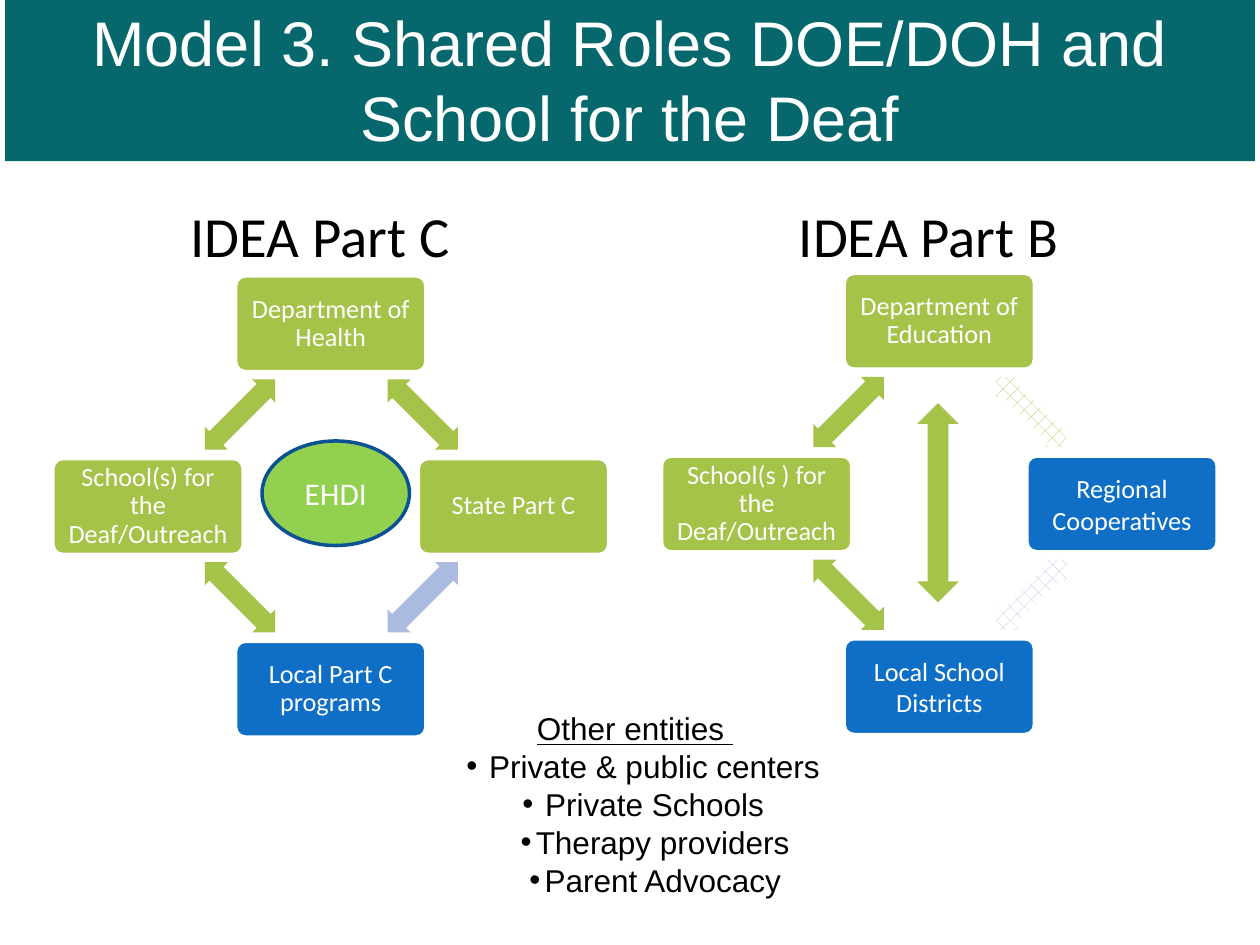
from lxml.etree import SubElement
from pptx import Presentation
from pptx.dml.color import RGBColor
from pptx.enum.dml import MSO_PATTERN as Pattern
from pptx.enum.shapes import MSO_SHAPE as Shape
from pptx.enum.text import MSO_ANCHOR as Anchor, MSO_AUTO_SIZE as AutoSize, PP_ALIGN as Align
from pptx.oxml.ns import qn
from pptx.util import Inches, Pt

COLORS = {
    "teal": "06686C",
    "green": "A5C249",
    "blue": "0F6FC6",
    "lavender": "ABBBDF",
    "lime": "92D050",
    "navy": "0B5292",
    "white": "FFFFFF",
    "black": "000000",
}

NODE_OFFSETS = [(1.45, 0), (2.9, 1.45), (1.45, 2.9), (0, 1.45)]
ARROW_OFFSETS = [(2.54, 0.97), (2.54, 2.42), (1.09, 2.42), (1.09, 0.97)]

PART_C_NODES = [
    ("Department of Health", "green", 0.9),
    ("State Part C", "green", 0.9),
    ("Local Part C programs", "blue", 0.9),
    ("School(s) for the Deaf/Outreach", "green", 0.9),
]
PART_C_ARROWS = [("green", False), ("lavender", False), ("green", False), ("green", False)]

PART_B_NODES = [
    ("Department of Education", "green", 0.9),
    ("Regional\nCooperatives", "blue", 1.0),
    ("Local School Districts", "blue", 1.0),
    ("School(s ) for the Deaf/Outreach", "green", 0.9),
]
PART_B_ARROWS = [("green", True), ("lavender", True), ("green", False), ("green", False)]

ENTITIES = [
    ("Private & public centers", 0.31, -0.18),
    ("Private Schools", 0.31, -0.18),
    ("Therapy providers", 0.44, -0.12),
    ("Parent Advocacy", 0.44, -0.12),
]


def color(name):
    return RGBColor.from_string(COLORS[name])


def write_text(paragraph, text, size=18, font="Calibri", fill="white", underline=None, spacing=1.0):
    paragraph.alignment = Align.CENTER
    paragraph.line_spacing = spacing
    paragraph.space_before = Pt(0)
    run = paragraph.add_run()
    run.text = text
    run.font.size = Pt(size)
    run.font.name = font
    run.font.underline = underline
    run.font.color.rgb = color(fill)


def set_bullet(paragraph, margin=0, indent=0, character=None):
    properties = paragraph._p.get_or_add_pPr()
    properties.set("marL", str(Inches(margin)))
    properties.set("indent", str(Inches(indent)))
    if character:
        SubElement(properties, qn("a:buChar")).set("char", character)
    else:
        SubElement(properties, qn("a:buNone"))


class RolesSlide:
    def __init__(self, presentation):
        self.slide = presentation.slides.add_slide(presentation.slide_layouts[1])

    def place(self, shape, left, top, width, height):
        shape.left, shape.top = Inches(left), Inches(top)
        shape.width, shape.height = Inches(width), Inches(height)

    def frame(self, shape, anchor=Anchor.MIDDLE, inset=None):
        frame = shape.text_frame
        frame.word_wrap = True
        frame.auto_size = AutoSize.NONE
        frame.vertical_anchor = anchor
        if inset is not None:
            frame.margin_left = frame.margin_right = Inches(inset)
            frame.margin_top = frame.margin_bottom = Inches(inset)
        return frame

    def banner(self, text, box):
        title = self.slide.shapes.title
        self.place(title, *box)
        title.fill.solid()
        title.fill.fore_color.rgb = color("teal")
        write_text(self.frame(title).paragraphs[0], text, size=36, font="Arial")

    def heading(self, text, box):
        text_box = self.slide.shapes.add_textbox(*map(Inches, box))
        write_text(self.frame(text_box).paragraphs[0], text, size=32.4, fill="black")

    def shape(self, kind, box, fill, line=None, patterned=False):
        shape = self.slide.shapes.add_shape(kind, *map(Inches, box))
        shape.shadow.inherit = False
        if patterned:
            shape.fill.patterned()
            shape.fill.pattern = Pattern.PERCENT_25
            shape.fill.back_color.rgb = color("white")
        else:
            shape.fill.solid()
        shape.fill.fore_color.rgb = color(fill)
        if line:
            shape.line.color.rgb = color(line)
            shape.line.width = Pt(2)
        else:
            shape.line.fill.background()
        return shape

    def node(self, text, left, top, fill, spacing):
        node = self.shape(Shape.ROUNDED_RECTANGLE, (left, top, 1.51, 0.76), fill, "white")
        node.adjustments[0] = 0.1
        frame = self.frame(node, inset=0.06)
        for index, line in enumerate(text.split("\n")):
            paragraph = frame.add_paragraph() if index else frame.paragraphs[0]
            write_text(paragraph, line, size=15, spacing=spacing)

    def arrow(self, left, top, rotation, fill, patterned):
        box = (left, top, 0.79, 0.26)
        arrow = self.shape(Shape.LEFT_RIGHT_ARROW, box, fill, patterned=patterned)
        arrow.rotation = rotation
        arrow.adjustments[0] = 0.6
        arrow.adjustments[1] = 0.5

    def cycle(self, left, top, nodes, arrows):
        for (x, y), (text, fill, spacing) in zip(NODE_OFFSETS, nodes):
            self.node(text, left + x, top + y, fill, spacing)
        for index, ((x, y), (fill, patterned)) in enumerate(zip(ARROW_OFFSETS, arrows)):
            self.arrow(left + x, top + y, 45 + 90 * index, fill, patterned)

    def oval(self, text, box):
        oval = self.shape(Shape.OVAL, box, "lime", "navy")
        write_text(self.frame(oval).paragraphs[0], text)

    def entity_list(self, heading, entities, box):
        body = self.slide.placeholders[1]
        self.place(body, *box)
        frame = self.frame(body, anchor=Anchor.TOP)
        paragraph = frame.paragraphs[0]
        write_text(paragraph, heading, font="Arial", fill="black", underline=True)
        set_bullet(paragraph)
        for text, margin, indent in entities:
            paragraph = frame.add_paragraph()
            write_text(paragraph, text, font="Arial", fill="black")
            set_bullet(paragraph, margin, indent, "•")


def main():
    presentation = Presentation()
    presentation.slide_width, presentation.slide_height = Inches(10), Inches(7.5)
    roles = RolesSlide(presentation)
    roles.banner("Model 3. Shared Roles DOE/DOH and School for the Deaf", (0.04, -0.03, 9.92, 1.31))
    roles.heading("IDEA Part C", (1.04, 1.5, 3, 0.72))
    roles.heading("IDEA Part B", (5.87, 1.5, 3, 0.72))
    roles.cycle(0.42, 2.19, PART_C_NODES, PART_C_ARROWS)
    roles.cycle(5.25, 2.17, PART_B_NODES, PART_B_ARROWS)
    roles.entity_list("Other entities ", ENTITIES, (3.33, 5.58, 3.42, 1.92))
    roles.oval("EHDI", (2.08, 3.5, 1.17, 0.83))
    roles.shape(Shape.UP_DOWN_ARROW, (7.28, 3.2, 0.33, 1.58), "green")
    presentation.save("out.pptx")


if __name__ == "__main__":
    main()
